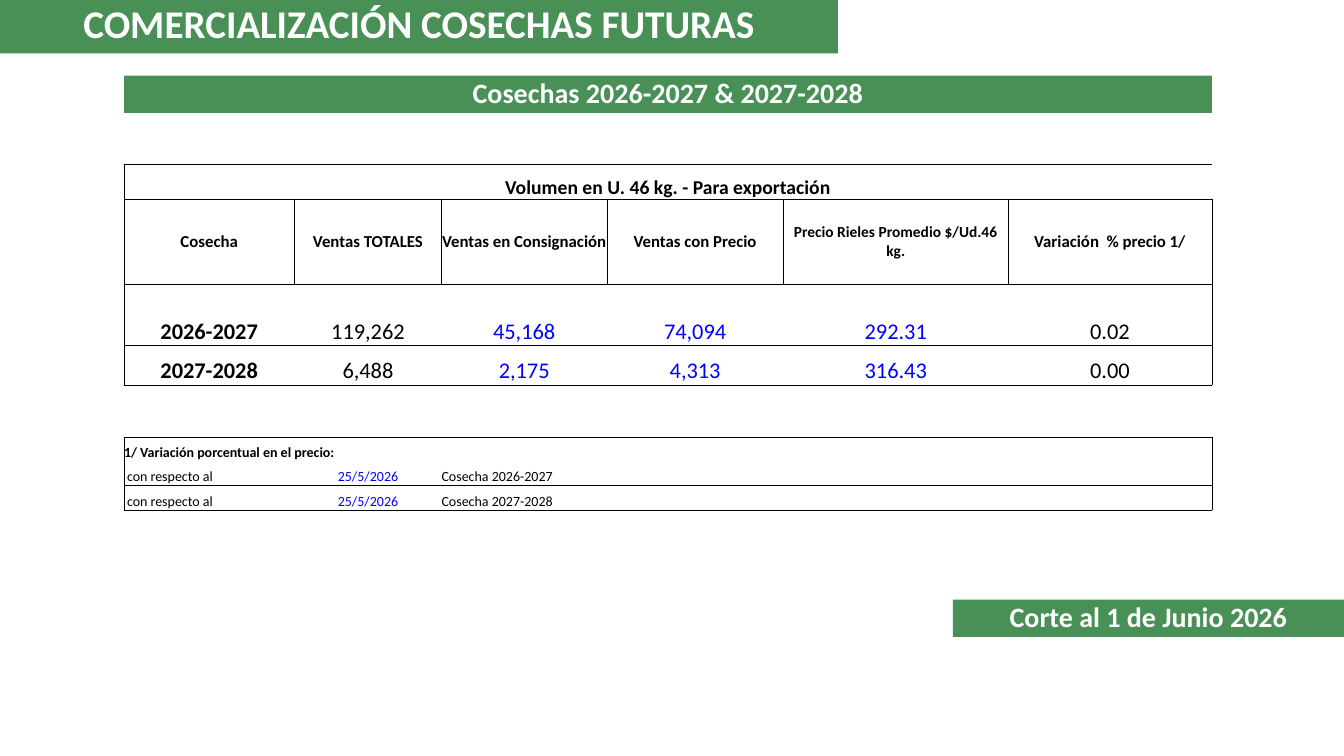
from dataclasses import dataclass

from lxml import etree
from pptx import Presentation
from pptx import util as u
from pptx.dml.color import RGBColor
from pptx.enum import shapes, text
from pptx.oxml.ns import qn

GREEN, WHITE, BLACK, BLUE = "499057", "FFFFFF", "000000", "0000FF"
CENTER, LEFT = text.PP_ALIGN.CENTER, text.PP_ALIGN.LEFT
MIDDLE, BOTTOM = text.MSO_ANCHOR.MIDDLE, text.MSO_ANCHOR.BOTTOM

TABLE_LEFT, TABLE_WIDTH = 1.23, 10.79
COLUMN_WIDTHS = [1.69, 1.46, 1.64, 1.75, 2.23, 2.02]
ROW_HEIGHTS = [0.35, 0.84, 0.22, 0.39, 0.39, 0.25, 0.27, 0.24, 0.24, 0.24]
CAPTION, HEADER, FIRST_HARVEST, NOTE, FIRST_NOTE = 0, 1, 3, 7, 8
RULED_BELOW = {0, 1, 3, 4, 6, 8, 9}
GAP_ROWS = {5, 6}

HEADINGS = ["Cosecha", "Ventas TOTALES", "Ventas en Consignación", "Ventas con Precio",
            "Precio Rieles Promedio $/Ud.46 kg.", "Variación  % precio 1/"]
HARVESTS = [
    ["2026-2027", "119,262", "45,168", "74,094", "292.31", "0.02"],
    ["2027-2028", "6,488", "2,175", "4,313", "316.43", "0.00"],
]
HARVEST_COLORS = [BLACK, BLACK, BLUE, BLUE, BLUE, BLACK]
PRICE_DATE = "25/5/2026"


@dataclass
class Bar:
    label: str
    left: float
    top: float
    width: float


@dataclass
class Entry:
    row: int
    column: int
    label: str
    size: float
    bold: bool = False
    color: str = BLACK
    align: text.PP_ALIGN = CENTER
    anchor: text.MSO_ANCHOR = BOTTOM
    indent: float = 0


BARS = [
    Bar("Cosechas 2026-2027 & 2027-2028", TABLE_LEFT, 0.75, TABLE_WIDTH),
    Bar("Corte al 1 de Junio 2026", 9.45, 5.95, 3.88),
]


def rgb(value: str) -> RGBColor:
    return RGBColor.from_string(value)


def format_paragraph(p, size: float, bold: bool, color: str, align) -> None:
    p.alignment = align
    p.font.name = "Calibri"
    p.font.size = u.Pt(size)
    p.font.bold = bold
    p.font.color.rgb = rgb(color)


def fill_bar(s, label: str, size: float, anchor) -> None:
    s.fill.solid()
    s.fill.fore_color.rgb = rgb(GREEN)
    s.line.fill.background()
    tf = s.text_frame
    tf.word_wrap = True
    tf.auto_size = text.MSO_AUTO_SIZE.NONE
    tf.vertical_anchor = anchor
    p = tf.paragraphs[0]
    p.text = label
    p.line_spacing = 0.9
    format_paragraph(p, size, True, WHITE, CENTER)


def add_title(slide) -> None:
    s = slide.shapes.title
    s.left, s.top, s.width, s.height = [u.Inches(v) for v in (0, 0, 8.31, 0.53)]
    fill_bar(s, "COMERCIALIZACIÓN COSECHAS FUTURAS", 28, text.MSO_ANCHOR.TOP)


def add_bar(slide, bar: Bar) -> None:
    s = slide.shapes.add_shape(shapes.MSO_SHAPE.RECTANGLE, u.Inches(bar.left),
                               u.Inches(bar.top), u.Inches(bar.width), u.Inches(0.37))
    s.shadow.inherit = False
    fill_bar(s, bar.label, 20, MIDDLE)


def set_borders(cell, row: int, column: int) -> None:
    """Frame each block of rows; only the header has inner vertical lines."""
    framed = row not in GAP_ROWS
    last = len(COLUMN_WIDTHS) - 1
    drawn = {
        "L": framed and (column == 0 or row == HEADER),
        "R": framed and (column == last or row == HEADER),
        "T": row == 0 or row - 1 in RULED_BELOW,
        "B": row in RULED_BELOW,
    }
    tc_pr = cell._tc.get_or_add_tcPr()
    for side, visible in drawn.items():
        ln = etree.SubElement(tc_pr, qn(f"a:ln{side}"), w=str(u.Pt(0.5)))
        if visible:
            fill = etree.SubElement(ln, qn("a:solidFill"))
            etree.SubElement(fill, qn("a:srgbClr"), val=BLACK)
        else:
            etree.SubElement(ln, qn("a:noFill"))


def table_entries() -> list[Entry]:
    entries = [Entry(CAPTION, 0, "Volumen en U. 46 kg. - Para exportación", 14, True)]
    for column, heading in enumerate(HEADINGS):
        size = 11 if column == 4 else 12
        entries.append(Entry(HEADER, column, heading, size, True, anchor=MIDDLE))
    entries.append(Entry(NOTE, 0, "1/ Variación porcentual en el precio:", 10, True, align=LEFT))
    for i, harvest in enumerate(HARVESTS):
        for column, (value, color) in enumerate(zip(harvest, HARVEST_COLORS)):
            entries.append(Entry(FIRST_HARVEST + i, column, value, 16, column == 0, color))
        row = FIRST_NOTE + i
        entries += [
            Entry(row, 0, "con respecto al", 10, align=LEFT, indent=0.03),
            Entry(row, 1, PRICE_DATE, 10, color=BLUE),
            Entry(row, 2, f"Cosecha {harvest[0]}", 10, align=LEFT),
        ]
    return entries


def add_sales_table(slide) -> None:
    frame = slide.shapes.add_table(
        len(ROW_HEIGHTS), len(COLUMN_WIDTHS), u.Inches(TABLE_LEFT), u.Inches(1.63),
        u.Inches(TABLE_WIDTH), u.Inches(sum(ROW_HEIGHTS)))
    table = frame.table
    table.first_row = table.horz_banding = False
    for column, width in zip(table.columns, COLUMN_WIDTHS):
        column.width = u.Inches(width)
    for row, height in zip(table.rows, ROW_HEIGHTS):
        row.height = u.Inches(height)
    for row in range(len(ROW_HEIGHTS)):
        for column in range(len(COLUMN_WIDTHS)):
            cell = table.cell(row, column)
            cell.margin_left = cell.margin_right = cell.margin_top = cell.margin_bottom = 0
            set_borders(cell, row, column)
            cell.fill.background()
            cell.text_frame.paragraphs[0].font.size = u.Pt(10)
    table.cell(CAPTION, 0).merge(table.cell(CAPTION, 5))
    table.cell(NOTE, 0).merge(table.cell(NOTE, 2))
    for entry in table_entries():
        cell = table.cell(entry.row, entry.column)
        cell.vertical_anchor = entry.anchor
        cell.margin_left = u.Inches(entry.indent)
        p = cell.text_frame.paragraphs[0]
        p.text = entry.label
        format_paragraph(p, entry.size, entry.bold, entry.color, entry.align)


def main() -> None:
    prs = Presentation()
    prs.slide_width, prs.slide_height = u.Inches(13.33), u.Inches(7.5)
    slide = prs.slides.add_slide(prs.slide_layouts[5])
    add_title(slide)
    for bar in BARS:
        add_bar(slide, bar)
    add_sales_table(slide)
    prs.save("out.pptx")


if __name__ == "__main__":
    main()
